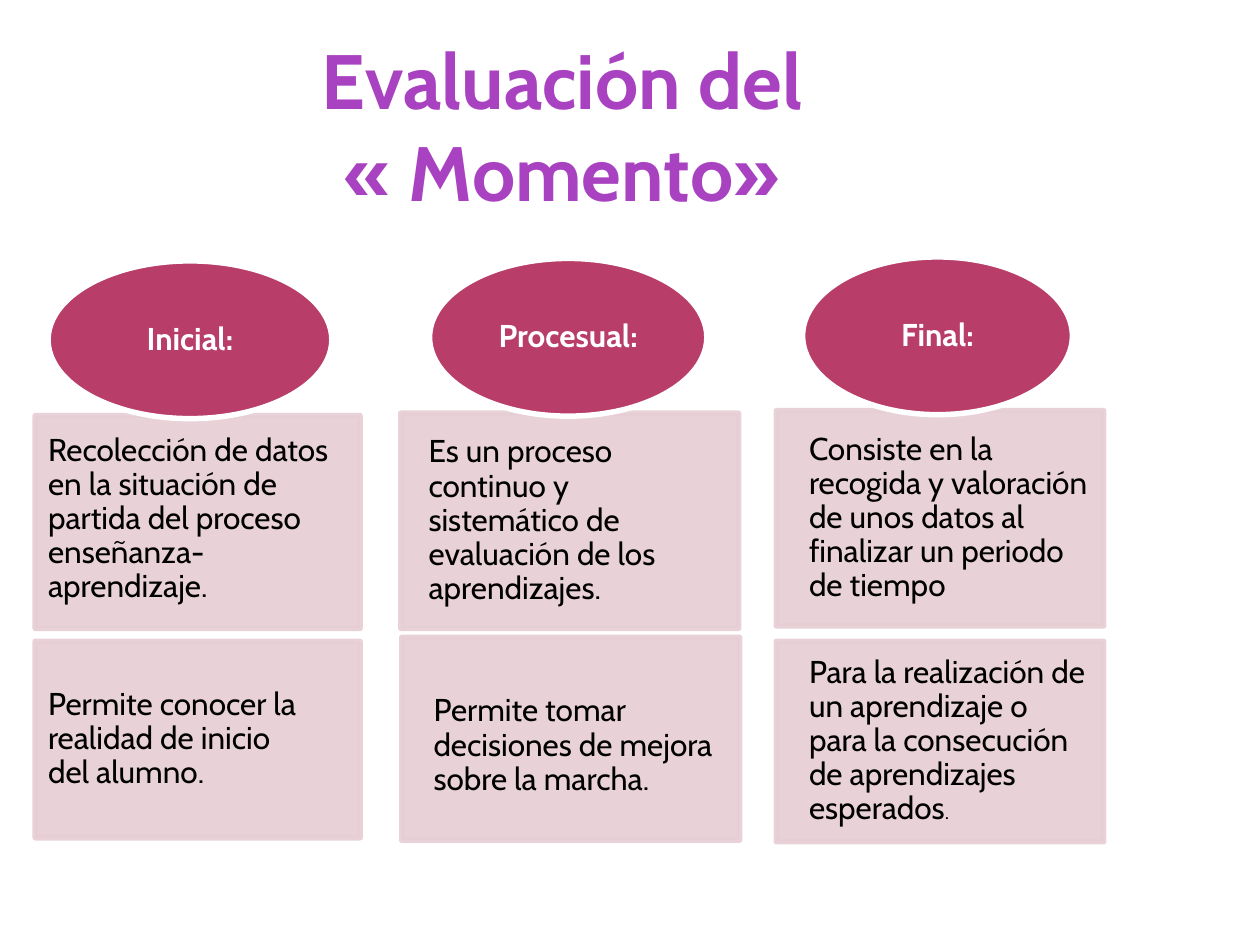
from dataclasses import dataclass

from lxml import etree
from pptx import Presentation
from pptx.dml.color import RGBColor
from pptx.enum.shapes import MSO_SHAPE
from pptx.enum.text import MSO_ANCHOR, MSO_AUTO_SIZE, PP_ALIGN
from pptx.oxml.ns import qn
from pptx.util import Cm, Pt

OVAL, RECTANGLE = MSO_SHAPE.OVAL, MSO_SHAPE.RECTANGLE
TOP, MIDDLE = MSO_ANCHOR.TOP, MSO_ANCHOR.MIDDLE
LEFT, CENTER = PP_ALIGN.LEFT, PP_ALIGN.CENTER
GROW = MSO_AUTO_SIZE.SHAPE_TO_FIT_TEXT
TITLE_ONLY = 5
PAD = 0.25  # cm
OVAL_INSET = 0.146  # share of an oval outside its inscribed rectangle, per side


@dataclass(frozen=True)
class Theme:
    font: str = "Cabin"
    title: RGBColor = RGBColor(0xA9, 0x42, 0xC1)
    oval: RGBColor = RGBColor(0xB8, 0x3D, 0x68)
    card: RGBColor = RGBColor(0xE6, 0xCE, 0xD4)
    ink: RGBColor = RGBColor(0, 0, 0)
    white: RGBColor = RGBColor(0xFF, 0xFF, 0xFF)
    title_size: float = 44
    text_size: float = 18
    small_size: float = 12
    outline: float = 3.15
    card_opacity: int = 90


@dataclass(frozen=True)
class Box:
    """A rectangle in centimetres."""
    left: float
    top: float
    width: float
    height: float

    def lengths(self) -> tuple:
        return Cm(self.left), Cm(self.top), Cm(self.width), Cm(self.height)

    def inscribed(self) -> "Box":
        dx, dy = self.width * OVAL_INSET, self.height * OVAL_INSET
        return Box(self.left + dx, self.top + dy, self.width - 2 * dx, self.height - 2 * dy)


@dataclass(frozen=True)
class Card:
    panel: Box
    text_area: Box
    text: str
    small_ending: str = ""


@dataclass(frozen=True)
class Stage:
    heading: str
    oval: Box
    cards: tuple[Card, Card]


THEME = Theme()
TITLE_BOX = Box(0.51, 0.53, 22, 4.55)
TITLE_LINES = ("Evaluación del ", "« Momento» ")
STAGES = (
    Stage("Inicial:", Box(0.97, 5.26, 5.72, 3.18), (
        Card(Box(0.71, 8.38, 6.55, 4.29), Box(0.97, 8.33, 6.27, 4.29),
             "Recolección de datos en la situación de partida del proceso enseñanza-aprendizaje."),
        Card(Box(0.71, 12.93, 6.55, 3.96), Box(0.97, 12.93, 5.51, 3.96),
             "Permite conocer la realidad de inicio del alumno."),
    )),
    Stage("Procesual:", Box(8.66, 5.21, 5.59, 3.18), (
        Card(Box(8.08, 8.33, 6.81, 4.34), Box(8.64, 8.33, 5.72, 4.34),
             "Es un proceso continuo y sistemático de evaluación de los aprendizajes."),
        Card(Box(8.1, 12.85, 6.81, 4.09), Box(8.74, 12.85, 6.07, 4.37),
             "Permite tomar decisiones de mejora sobre la marcha."),
    )),
    Stage("Final:", Box(16.18, 5.18, 5.44, 3.18), (
        Card(Box(15.65, 8.28, 6.6, 4.34), Box(16.31, 8.28, 5.94, 4.34),
             "Consiste en la recogida y valoración de unos datos al finalizar un periodo de tiempo"),
        Card(Box(15.65, 12.93, 6.6, 4.04), Box(16.31, 12.93, 5.94, 4.04),
             "Para la realización de un aprendizaje o para la consecución de aprendizajes esperados",
             "."),
    )),
)


def apply_format(target, values: dict) -> None:
    for attribute, value in values.items():
        setattr(target, attribute, value)


def add_run(paragraph, text: str, size: float, color: RGBColor, bold: bool = False) -> None:
    run = paragraph.add_run()
    run.text = text
    apply_format(run.font, {"name": THEME.font, "size": Pt(size), "bold": bold})
    run.font.color.rgb = color


def add_panel(slide, preset, box: Box, fill: RGBColor, line: RGBColor, opacity: int = 100) -> None:
    panel = slide.shapes.add_shape(preset, *box.lengths())
    panel.shadow.inherit = False
    panel.fill.solid()
    panel.fill.fore_color.rgb = fill
    panel.line.color.rgb = line
    panel.line.width = Pt(THEME.outline)
    if opacity < 100:
        for color in panel.fill._xPr.iter(qn("a:srgbClr")):
            etree.SubElement(color, qn("a:alpha"), val=str(opacity * 1000))


def add_text_area(slide, box: Box, align, left_pad: float, pad: float):
    """Add a middle-anchored text box and return its first paragraph."""
    frame = slide.shapes.add_textbox(*box.lengths()).text_frame
    apply_format(frame, {
        "word_wrap": True, "vertical_anchor": MIDDLE, "margin_left": Cm(left_pad),
        "margin_top": Cm(pad), "margin_right": Cm(pad), "margin_bottom": Cm(pad),
    })
    paragraph = frame.paragraphs[0]
    apply_format(paragraph, {"alignment": align, "line_spacing": 0.9})
    return paragraph


def add_title(slide) -> None:
    title = slide.shapes.title
    left, top, width, height = TITLE_BOX.lengths()
    apply_format(title, {"left": left, "top": top, "width": width, "height": height})
    frame = title.text_frame
    apply_format(frame, {"word_wrap": True, "auto_size": GROW, "vertical_anchor": TOP})
    for index, line in enumerate(TITLE_LINES):
        paragraph = frame.add_paragraph() if index else frame.paragraphs[0]
        paragraph.alignment = CENTER
        add_run(paragraph, line, THEME.title_size, THEME.title, bold=True)


def add_card(slide, card: Card) -> None:
    add_panel(slide, RECTANGLE, card.panel, THEME.card, THEME.card, THEME.card_opacity)
    paragraph = add_text_area(slide, card.text_area, LEFT, 0, PAD)
    add_run(paragraph, card.text, THEME.text_size, THEME.ink)
    if card.small_ending:
        add_run(paragraph, card.small_ending, THEME.small_size, THEME.ink)


def add_stage(slide, stage: Stage) -> None:
    for card in stage.cards:
        add_card(slide, card)
    add_panel(slide, OVAL, stage.oval, THEME.oval, THEME.white)
    heading = add_text_area(slide, stage.oval.inscribed(), CENTER, 0, 0)
    add_run(heading, stage.heading, THEME.text_size, THEME.white, bold=True)


def main() -> None:
    presentation = Presentation()
    apply_format(presentation, {"slide_width": Cm(25.4), "slide_height": Cm(19.05)})
    slide = presentation.slides.add_slide(presentation.slide_layouts[TITLE_ONLY])
    add_title(slide)
    for stage in STAGES:
        add_stage(slide, stage)
    presentation.save("out.pptx")


if __name__ == "__main__":
    main()
